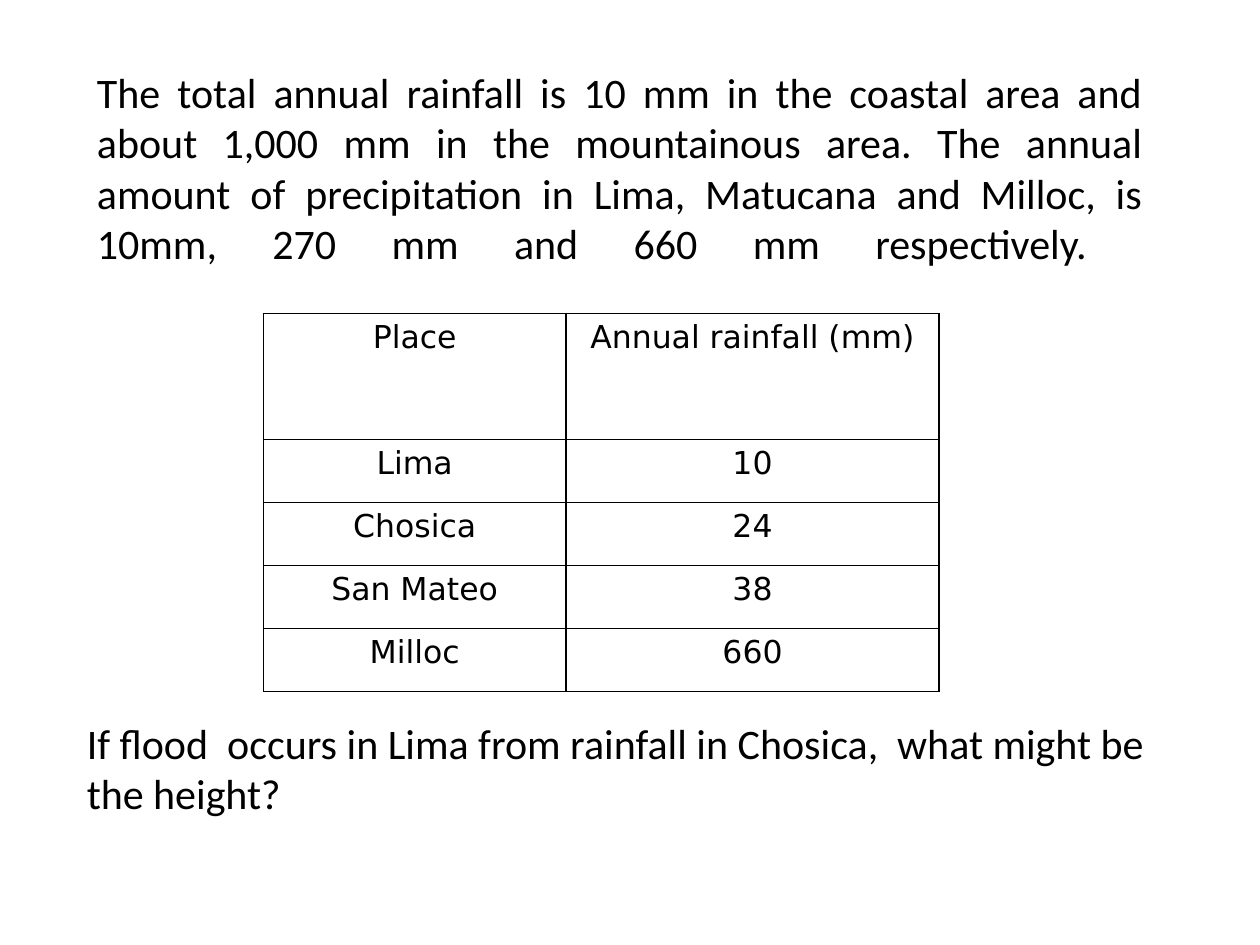
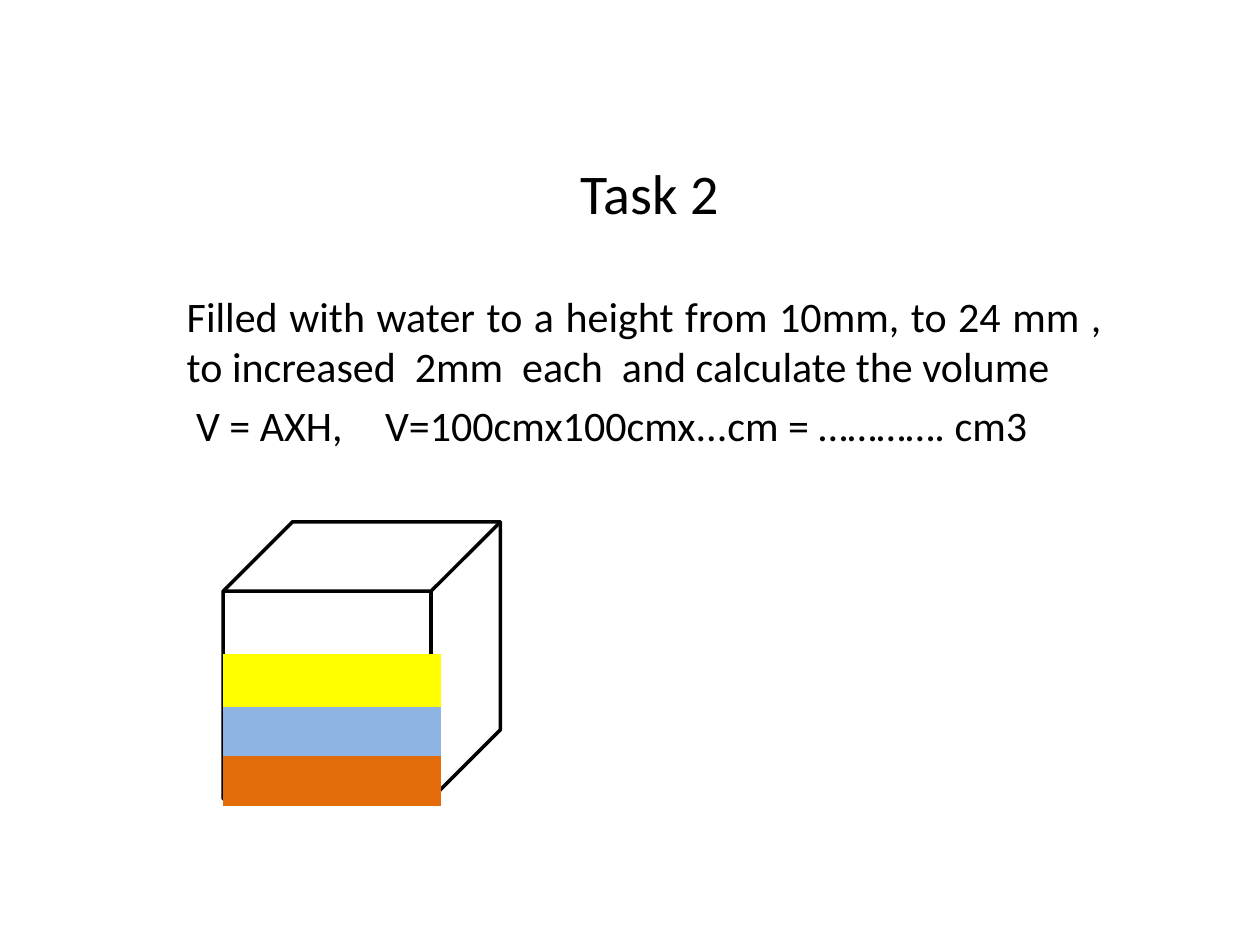
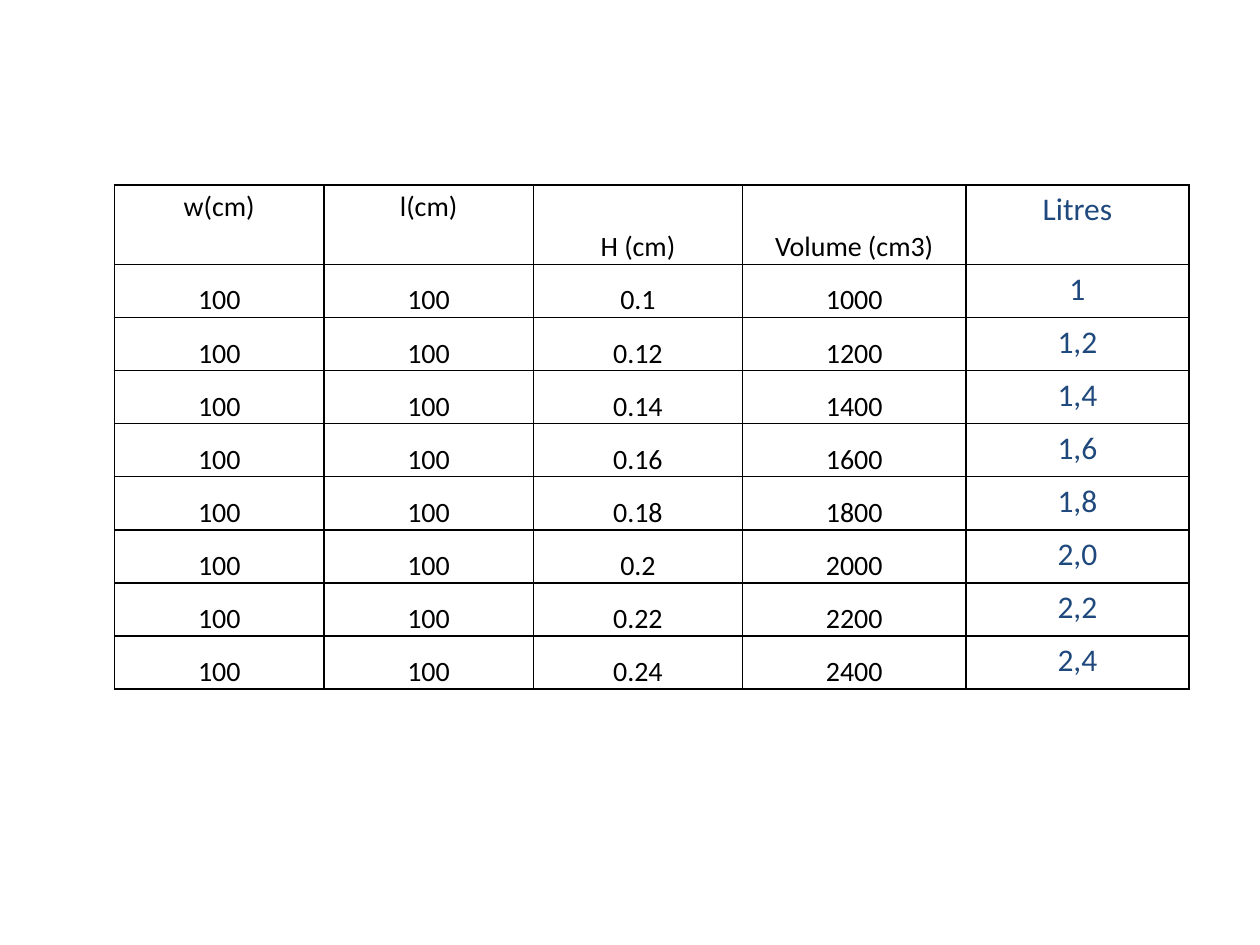
from lxml import etree
from pptx import Presentation
from pptx.dml.color import RGBColor
from pptx.enum.shapes import MSO_CONNECTOR as Link, MSO_SHAPE as Shape
from pptx.enum.text import MSO_ANCHOR as Anchor, MSO_AUTO_SIZE as Fit, PP_ALIGN as Align
from pptx.oxml.ns import qn
from pptx.util import Cm, Pt

INK = {"black": "000000", "navy": "1F497D", "orange": "E46C0A",
       "blue": "8EB4E3", "yellow": "FFFF00"}
TITLE, TITLE_ONLY, BLANK = 0, 5, 6


def rgb(name):
    return RGBColor.from_string(INK[name])


class Deck:
    """Holds the shared style and the slide being filled."""

    font = "Calibri"
    size = 24
    ink = "black"

    def __init__(self):
        self.prs = Presentation()
        self.prs.slide_width, self.prs.slide_height = Cm(25.4), Cm(19.05)

    def add(self, layout):
        self.slide = self.prs.slides.add_slide(self.prs.slide_layouts[layout])

    def style(self, para, align, size=None, font=None, ink=None):
        para.alignment = align
        para.font.name = font or self.font
        para.font.size = Pt(size or self.size)
        para.font.color.rgb = rgb(ink or self.ink)

    def place(self, shape, box):
        shape.left, shape.top, shape.width, shape.height = map(Cm, box)
        frame = shape.text_frame
        frame.word_wrap = True
        frame.auto_size = Fit.NONE
        return frame

    def title(self, text, box, align, size, foot):
        """Title centred above a foot margin; the break justifies its last line."""
        frame = self.place(self.slide.shapes.title, box)
        frame.vertical_anchor = Anchor.MIDDLE
        frame.margin_bottom = Cm(foot)
        para = frame.paragraphs[0]
        para.text = text
        para.add_line_break()
        self.style(para, align, size)

    def body(self, lines, box):
        frame = self.place(self.slide.placeholders[1], box)
        frame.text = "\n".join(lines)
        for para in frame.paragraphs:
            self.style(para, Align.JUSTIFY)
        return frame.paragraphs

    def note(self, text, box):
        frame = self.place(self.slide.shapes.add_textbox(*map(Cm, box)), box)
        frame.text = text
        self.style(frame.paragraphs[0], Align.LEFT)

    def cube(self, box, width):
        cube = self.slide.shapes.add_shape(Shape.CUBE, *map(Cm, box))
        cube.shadow.inherit = False
        cube.fill.background()
        cube.line.color.rgb = rgb(self.ink)
        cube.line.width = Pt(width)

    def line(self, start, end, ink, width):
        line = self.slide.shapes.add_connector(
            Link.STRAIGHT, *map(Cm, start + end))
        line.line.color.rgb = rgb(ink)
        line.line.width = Pt(width)
        etree.SubElement(line._element.spPr, qn("a:effectLst"))

    def border(self, cell):
        props = cell._tc.get_or_add_tcPr()
        for side in ("lnL", "lnR", "lnT", "lnB"):
            edge = etree.SubElement(props, qn("a:" + side), w=str(Pt(1)))
            fill = etree.SubElement(edge, qn("a:solidFill"))
            etree.SubElement(fill, qn("a:srgbClr"), val=INK[self.ink])

    def table(self, rows, spot, wide, high, inset, look):
        """Draw a ruled table; look(row, col) gives the anchor and font style."""
        grid = self.slide.shapes.add_table(
            len(rows), len(wide), *map(Cm, spot + (sum(wide), sum(high)))).table
        grid.first_row = grid.horz_banding = False
        for col, width in zip(grid.columns, wide):
            col.width = Cm(width)
        for row, height in zip(grid.rows, high):
            row.height = Cm(height)
        for i, row in enumerate(rows):
            for j, text in enumerate(row):
                cell = grid.cell(i, j)
                anchor, font = look(i, j)
                cell.text = text
                cell.vertical_anchor = anchor
                cell.margin_left = cell.margin_right = Cm(inset)
                cell.margin_top = cell.margin_bottom = 0
                self.border(cell)
                cell.fill.background()
                para = cell.text_frame.paragraphs[0]
                para.line_spacing = 1.15
                self.style(para, Align.CENTER, **font)


def rain(deck):
    deck.add(TITLE_ONLY)
    deck.title("The total annual rainfall is 10 mm in the coastal area and about "
               "1,000 mm in the mountainous area. The annual amount of "
               "precipitation in Lima, Matucana and Milloc, is 10mm, 270 mm "
               "and 660 mm respectively. ",
               (1.7, 2.34, 21.59, 4.09), Align.JUSTIFY, 24, 1.14)
    rows = [("Place", "Annual rainfall (mm)"), ("Lima", "10"), ("Chosica", "24"),
            ("San Mateo", "38"), ("Milloc", "660")]
    deck.table(rows, (5.31, 6.32), [6.1, 7.52], [2.54] + [1.27] * 4, 0.18,
               lambda i, j: (Anchor.TOP, {"size": 18, "font": "DejaVu Sans"}))
    deck.note("If flood  occurs in Lima from rainfall in Chosica,  "
              "what might be the height?", (1.5, 14.33, 22.4, 3.33))


def task(deck):
    deck.add(TITLE)
    deck.title("Task 2", (2.31, 2.51, 21.59, 4.09), Align.CENTER, 32, 0.13)
    _, sums = deck.body(
        ["Filled with water to a height from 10mm, to 24 mm , "
         "to increased  2mm  each  and calculate the volume",
         "V = AXH,\tV=100cmx100cmx...cm = …………. cm3"],
        (3.51, 5.72, 18.97, 3.61))
    props = sums._p.get_or_add_pPr()
    props.set("marL", str(Cm(0.19)))
    tabs = etree.Element(qn("a:tabLst"))
    etree.SubElement(tabs, qn("a:tab"), pos=str(Cm(3.91)), algn="l")
    props.find(qn("a:defRPr")).addprevious(tabs)
    deck.cube((4.5, 10.52, 5.59, 5.59), 2)
    for i, ink in enumerate(("orange", "blue", "yellow")):
        level = 15.72 - i
        deck.line((4.5, level), (8.89, level), ink, 30)


def litres(deck):
    deck.add(BLANK)
    rows = [("w(cm)", "l(cm)", "H (cm)", "Volume (cm3)", "Litres")]
    tens = ("1", "1,2", "1,4", "1,6", "1,8", "2,0", "2,2", "2,4")
    for i, litre in enumerate(tens):
        mm = 10 + 2 * i
        rows.append(("100", "100", f"{mm / 100:g}", str(mm * 100), litre))

    def look(i, j):
        if j == 4:
            return Anchor.TOP, {"size": 18, "ink": "navy"}
        top = i == 0 and j < 2
        return Anchor.TOP if top else Anchor.BOTTOM, {"size": 16}

    deck.table(rows, (2.31, 3.73), [4.22] * 3 + [4.5] * 2,
               [1.6] + [1.07] * 8, 0.13, look)


def main():
    deck = Deck()
    for build in (rain, task, litres):
        build(deck)
    deck.prs.save("out.pptx")


if __name__ == "__main__":
    main()
